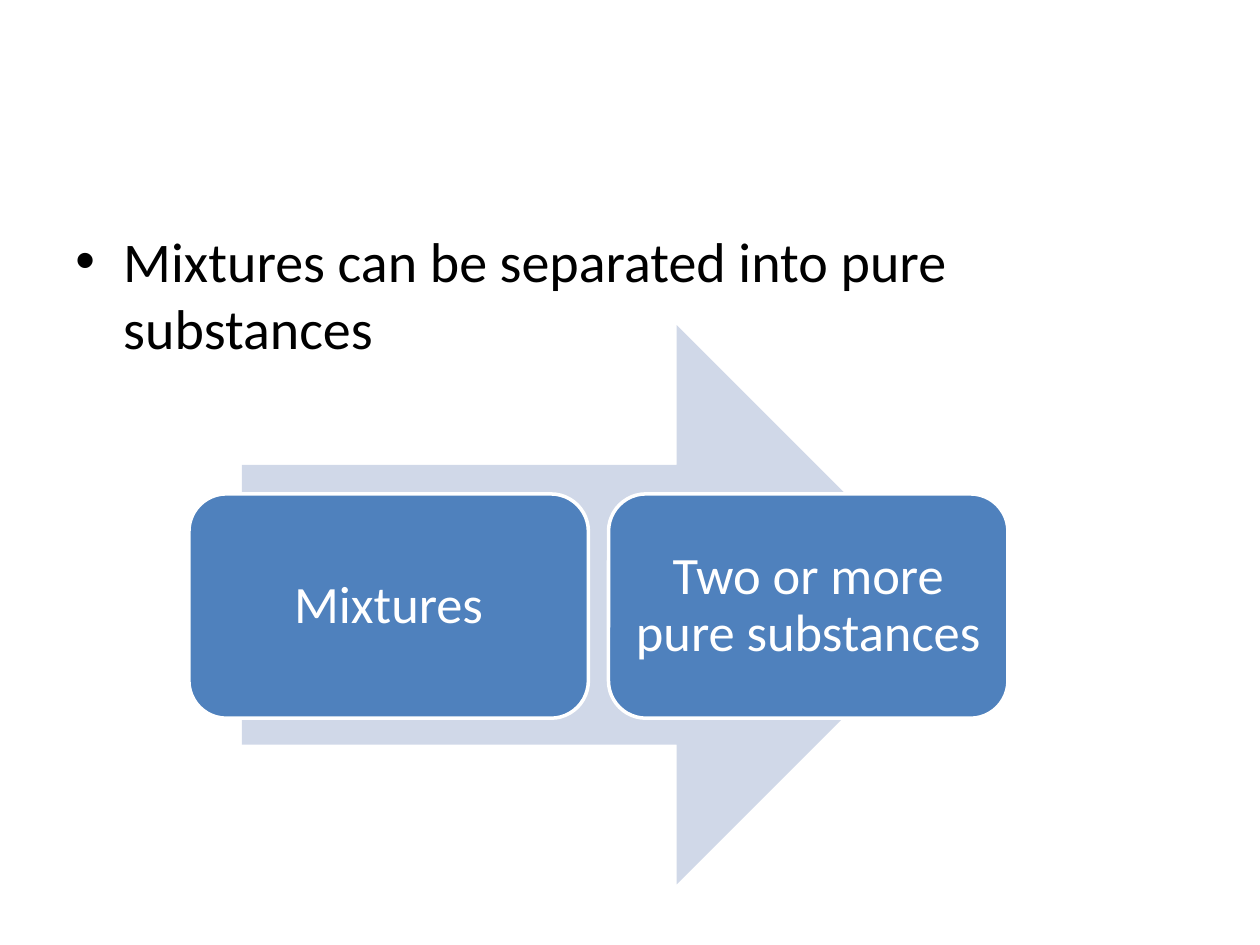
from lxml.etree import SubElement
from pptx import Presentation
from pptx.dml.color import RGBColor
from pptx.enum.shapes import MSO_SHAPE
from pptx.enum.text import MSO_ANCHOR, PP_ALIGN
from pptx.oxml.ns import qn
from pptx.util import Inches, Pt

BLACK = RGBColor(0x00, 0x00, 0x00)
WHITE = RGBColor(0xFF, 0xFF, 0xFF)
BLUE = RGBColor(0x4F, 0x81, 0xBD)
PALE_BLUE = RGBColor(0xD0, 0xD8, 0xE8)

STAGES = ["Mixtures", "Two or more pure substances"]
STAGE_LEFT, STAGE_TOP = 1.5, 3.92
STAGE_WIDTH, STAGE_HEIGHT = 3.17, 1.78
STAGE_PITCH = 3.33


def add_run(paragraph, wording, size, color):
    run = paragraph.add_run()
    run.text = wording
    run.font.name = "Calibri"
    run.font.size = Pt(size)
    run.font.color.rgb = color


def set_percent_spacing(paragraph, tag, percent):
    """Set space before or after relative to the text size."""
    spacing = SubElement(paragraph._p.get_or_add_pPr(), qn(tag))
    SubElement(spacing, qn("a:spcPct"), val=str(percent * 1000))


def add_bullet_text(slide, wording):
    statement = slide.shapes.add_textbox(Inches(0.5), Inches(1.75), Inches(9), Inches(4.95))
    statement.text_frame.word_wrap = True
    paragraph = statement.text_frame.paragraphs[0]
    set_percent_spacing(paragraph, "a:spcBef", 20)
    properties = paragraph._p.get_or_add_pPr()
    properties.set("marL", str(Inches(0.38)))
    properties.set("indent", str(Inches(-0.38)))
    SubElement(properties, qn("a:buFont"), typeface="Arial")
    SubElement(properties, qn("a:buChar"), char="•")
    add_run(paragraph, wording, 32, BLACK)


def add_filled_shape(slide, preset, left, top, width, height, color):
    shape = slide.shapes.add_shape(
        preset, Inches(left), Inches(top), Inches(width), Inches(height))
    shape.shadow.inherit = False
    shape.fill.solid()
    shape.fill.fore_color.rgb = color
    shape.line.fill.background()
    return shape


def add_stage(slide, left, wording):
    stage = add_filled_shape(slide, MSO_SHAPE.ROUNDED_RECTANGLE, left, STAGE_TOP,
                             STAGE_WIDTH, STAGE_HEIGHT, BLUE)
    stage.line.color.rgb = WHITE
    stage.line.width = Pt(2)
    frame = stage.text_frame
    frame.word_wrap = True
    frame.vertical_anchor = MSO_ANCHOR.MIDDLE
    frame.margin_left = frame.margin_right = Inches(0.12)
    frame.margin_top = frame.margin_bottom = Inches(0.12)
    paragraph = frame.paragraphs[0]
    paragraph.alignment = PP_ALIGN.CENTER
    paragraph.line_spacing = 0.9
    set_percent_spacing(paragraph, "a:spcAft", 35)
    add_run(paragraph, wording, 30, WHITE)


def main():
    presentation = Presentation()
    presentation.slide_width = Inches(10)
    presentation.slide_height = Inches(7.5)
    slide = presentation.slides.add_slide(presentation.slide_layouts[6])

    add_bullet_text(slide, "Mixtures can be separated into pure substances")
    add_filled_shape(slide, MSO_SHAPE.RIGHT_ARROW, 1.92, 2.58, 5.67, 4.44, PALE_BLUE)
    for index, wording in enumerate(STAGES):
        add_stage(slide, STAGE_LEFT + index * STAGE_PITCH, wording)

    presentation.save("out.pptx")


if __name__ == "__main__":
    main()
